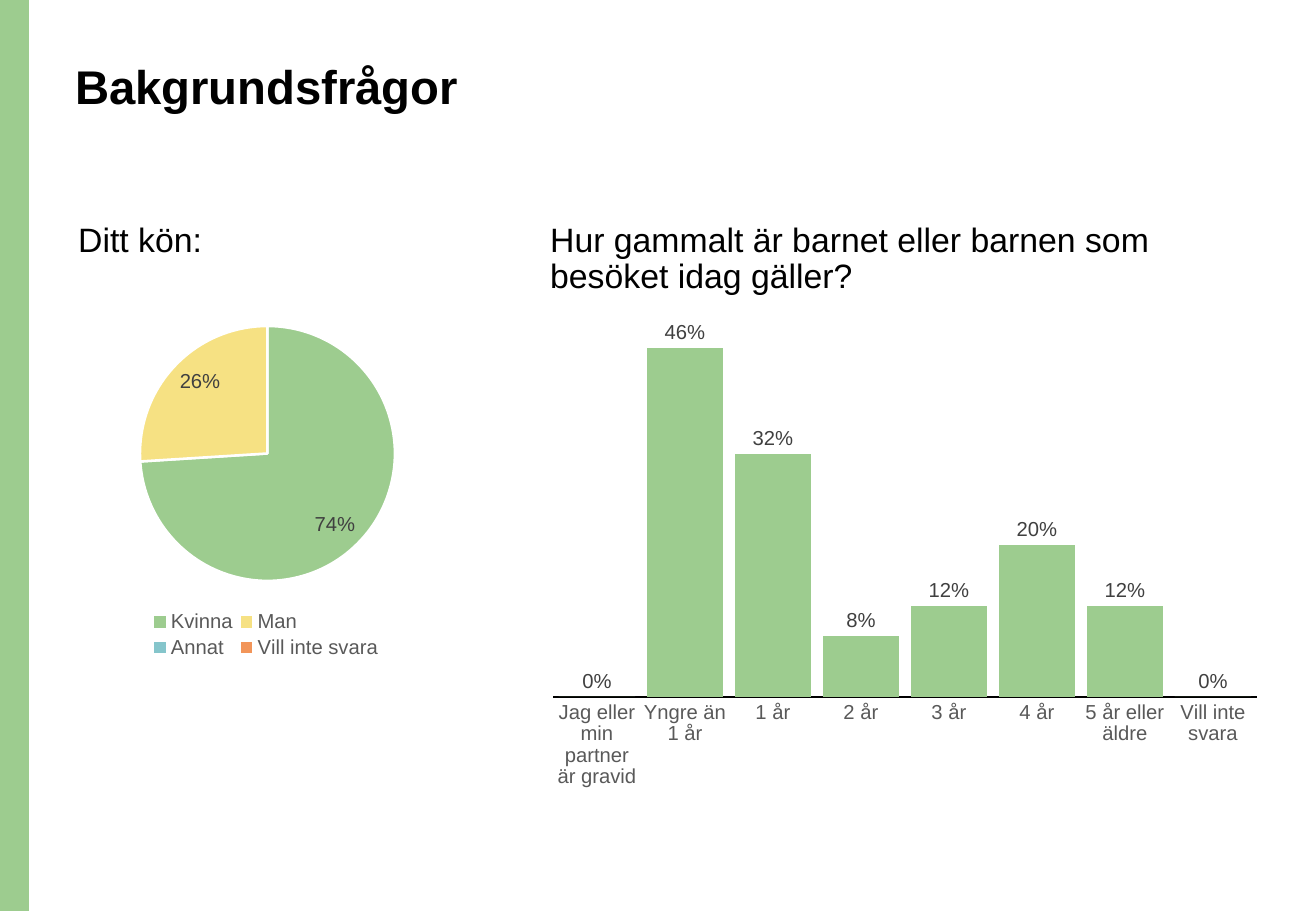
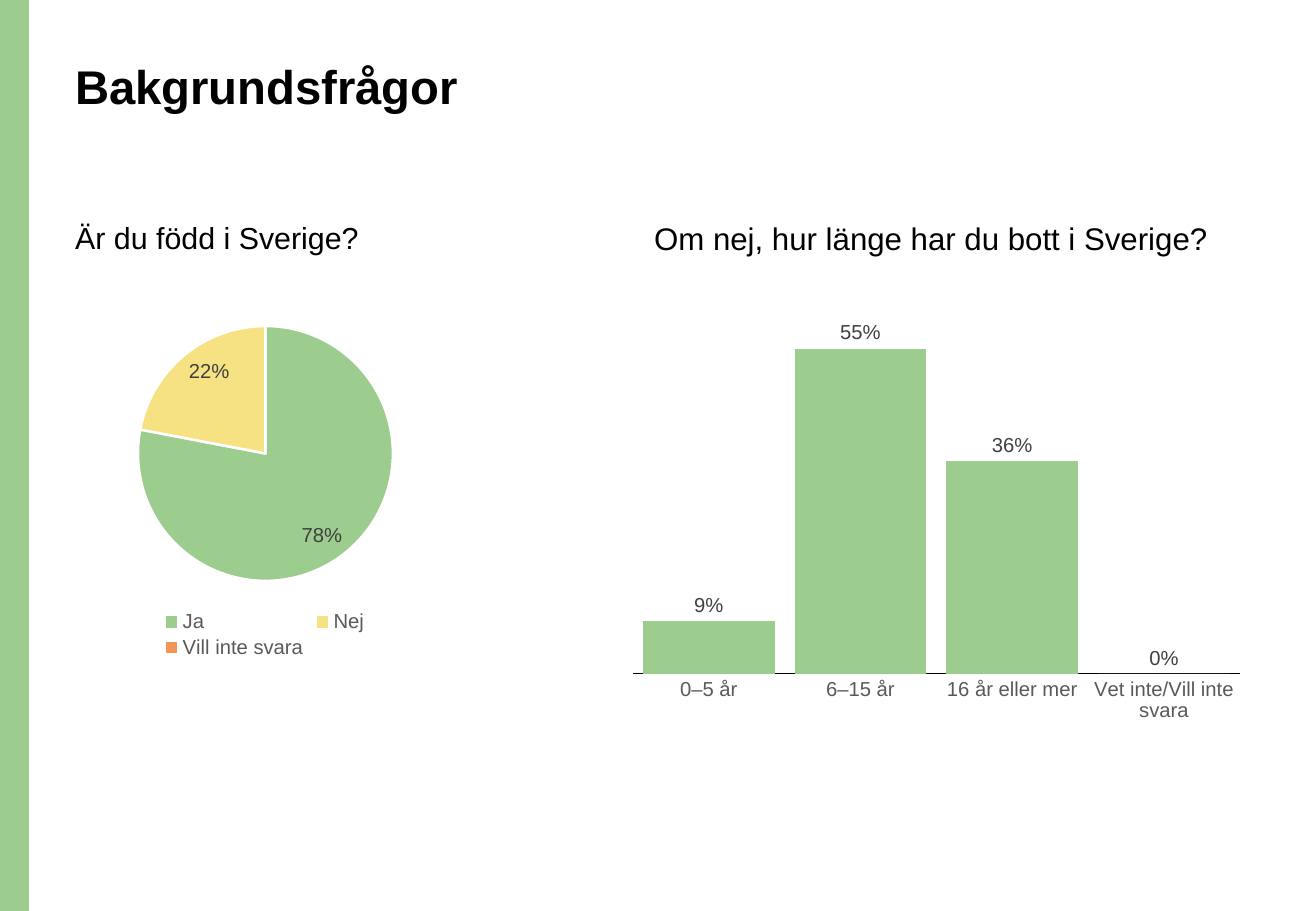
from collections import namedtuple
from dataclasses import dataclass

from lxml.etree import SubElement
from pptx import Presentation
from pptx.chart.data import CategoryChartData
from pptx.dml.color import RGBColor
from pptx.enum.chart import XL_CHART_TYPE, XL_LABEL_POSITION, XL_LEGEND_POSITION, XL_TICK_MARK
from pptx.enum.shapes import MSO_SHAPE
from pptx.enum.text import MSO_ANCHOR, MSO_AUTO_SIZE, PP_ALIGN
from pptx.oxml.ns import qn
from pptx.util import Pt

PX = 7526
W, H = 1316, 911
Box = namedtuple("Box", "x y w h")


@dataclass(frozen=True)
class Theme:
    font: str = "Arial"
    green: str = "9DCC8F"
    yellow: str = "F6E183"
    blue: str = "85C5CB"
    orange: str = "F29559"
    black: str = "000000"
    white: str = "FFFFFF"
    label: str = "404040"
    axis: str = "595959"
    title_size: int = 28
    chart_size: int = 10
    label_size: int = 12


T = Theme()
TITLE = Box(63, 58, 1135, 124)
BAND = Box(0, 0, 29, H)

SLIDES = [
    {
        "title": "Bakgrundsfrågor",
        "pie": {
            "question": "Ditt kön:", "size": 20,
            "heading": Box(66, 217, 556, 56), "frame": Box(64, 309, 405, 356),
            "plot": Box(76, 17, 255, 255), "legend": Box(82, 298, 240, 56),
            "answers": [("Kvinna", 0.74, T.green), ("Man", 0.26, T.yellow),
                        ("Annat", 0, T.blue), ("Vill inte svara", 0, T.orange)],
        },
        "bars": {
            "question": "Hur gammalt är barnet eller barnen som besöket idag gäller?", "size": 20,
            "heading": Box(538, 217, 733, 90), "frame": Box(538, 309, 733, 490),
            "plot": Box(15, 9, 704, 379), "max": 0.5,
            "answers": [("Jag eller min partner är gravid", 0), ("Yngre än 1 år", 0.46),
                        ("1 år", 0.32), ("2 år", 0.08), ("3 år", 0.12), ("4 år", 0.2),
                        ("5 år eller äldre", 0.12), ("Vill inte svara", 0)],
        },
    },
    {
        "title": "Bakgrundsfrågor",
        "pie": {
            "question": "Är du född i Sverige?", "size": 18,
            "heading": Box(63, 217, 556, 56), "frame": Box(63, 309, 405, 356),
            "plot": Box(75, 17, 255, 255), "legend": Box(96, 298, 212, 56),
            "answers": [("Ja", 0.78, T.green), ("Nej", 0.22, T.yellow),
                        ("Vill inte svara", 0, T.orange)],
        },
        "bars": {
            "question": "Om nej, hur länge har du bott i Sverige?", "size": 18.5,
            "heading": Box(642, 217, 611, 70), "frame": Box(620, 309, 633, 423),
            "plot": Box(13, 10, 607, 355), "max": 0.6,
            "answers": [("0–5 år", 0.09), ("6–15 år", 0.55),
                        ("16 år eller mer", 0.36), ("Vet inte/Vill inte svara", 0)],
        },
    },
]


def emu(box):
    return [v * PX for v in box]


def rgb(color):
    return RGBColor.from_string(color)


def set_font(font, size, color, bold=False):
    font.name, font.size, font.bold = T.font, Pt(size), bold
    font.color.rgb = rgb(color)


def write(sp, box, text, size, bold=False, before=0):
    sp.left, sp.top, sp.width, sp.height = emu(box)
    tf = sp.text_frame
    tf.word_wrap, tf.auto_size = True, MSO_AUTO_SIZE.NONE
    tf.vertical_anchor = MSO_ANCHOR.TOP
    p = tf.paragraphs[0]
    p.alignment, p.line_spacing, p.space_before = PP_ALIGN.LEFT, 0.9, Pt(before)
    r = p.add_run()
    r.text = text
    set_font(r.font, size, T.black, bold)


def place(chart, tag, index, box, frame, inner=False):
    parent = chart.element.find(".//" + qn(tag))
    for old in parent.findall(qn("c:layout")):
        parent.remove(old)
    layout = parent.makeelement(qn("c:layout"))
    parent.insert(index, layout)
    manual = SubElement(layout, qn("c:manualLayout"))
    values = [("layoutTarget", "inner")] if inner else []
    values += [("xMode", "edge"), ("yMode", "edge")]
    values += [(k, f"{a / b:.4f}") for k, a, b in
               zip("xywh", box, (frame.w, frame.h) * 2)]
    for key, value in values:
        SubElement(manual, qn("c:" + key)).set("val", value)


def add_chart(s, kind, part, label_pos, fmt):
    data = CategoryChartData(number_format="0%")
    data.categories = [a[0] for a in part["answers"]]
    data.add_series("Series 1", [a[1] for a in part["answers"]])
    chart = s.shapes.add_chart(kind, *emu(part["frame"]), data).chart
    chart.has_title = chart.has_legend = False
    set_font(chart.font, T.chart_size, T.black)
    plot = chart.plots[0]
    plot.has_data_labels = True
    labels = plot.data_labels
    labels.show_value, labels.position = True, label_pos
    labels.number_format, labels.number_format_is_linked = fmt, False
    set_font(labels.font, T.label_size, T.label)
    place(chart, "c:plotArea", 0, part["plot"], part["frame"], inner=True)
    return chart, plot


def add_pie(s, part):
    chart, plot = add_chart(s, XL_CHART_TYPE.PIE, part, XL_LABEL_POSITION.INSIDE_END,
                            '[<0.01]"";[>0.01]0%')
    plot.vary_by_categories = True
    for i, (_, _, color) in enumerate(part["answers"]):
        fmt = plot.series[0].points[i].format
        fmt.fill.solid()
        fmt.fill.fore_color.rgb = rgb(color)
        fmt.line.color.rgb = rgb(T.white)
        fmt.line.width = Pt(1.5)
    chart.has_legend = True
    legend = chart.legend
    legend.position, legend.include_in_layout = XL_LEGEND_POSITION.BOTTOM, False
    set_font(legend.font, T.label_size, T.axis)
    place(chart, "c:legend", 1, part["legend"], part["frame"])


def add_bars(s, part):
    chart, plot = add_chart(s, XL_CHART_TYPE.COLUMN_CLUSTERED, part,
                            XL_LABEL_POSITION.OUTSIDE_END, "0%")
    plot.vary_by_categories = False
    plot.gap_width, plot.overlap = 15, -27
    fill = plot.series[0].format.fill
    fill.solid()
    fill.fore_color.rgb = rgb(T.green)
    val, cat = chart.value_axis, chart.category_axis
    val.minimum_scale, val.maximum_scale = 0, part["max"]
    val.has_major_gridlines = val.visible = False
    cat.major_tick_mark = cat.minor_tick_mark = XL_TICK_MARK.NONE
    cat.format.line.color.rgb = rgb(T.black)
    cat.format.line.width = Pt(0.75)
    set_font(cat.tick_labels.font, T.label_size, T.axis)


def add_band(prs, s):
    band = s.shapes.add_shape(MSO_SHAPE.RECTANGLE, *emu(BAND))
    band.shadow.inherit = False
    band.fill.solid()
    band.fill.fore_color.rgb = rgb(T.green)
    band.line.fill.background()
    band.element.nvSpPr.cNvPr.set("id", "20")
    prs.slide_master.element.cSld.spTree.insert(2, band.element)


def add_slide(prs, content):
    s = prs.slides.add_slide(prs.slide_layouts.get_by_name("Comparison"))
    title, left, left_body, right, right_body = s.placeholders
    for sp in (left_body, right_body):
        sp.element.getparent().remove(sp.element)
    write(title, TITLE, content["title"], T.title_size, bold=True)
    for sp, key, draw in ((left, "pie", add_pie), (right, "bars", add_bars)):
        part = content[key]
        write(sp, part["heading"], part["question"], part["size"], before=10)
        draw(s, part)
    return s


def main():
    prs = Presentation()
    prs.slide_width, prs.slide_height = W * PX, H * PX
    slides = [add_slide(prs, content) for content in SLIDES]
    add_band(prs, slides[0])
    prs.save("out.pptx")


if __name__ == "__main__":
    main()
